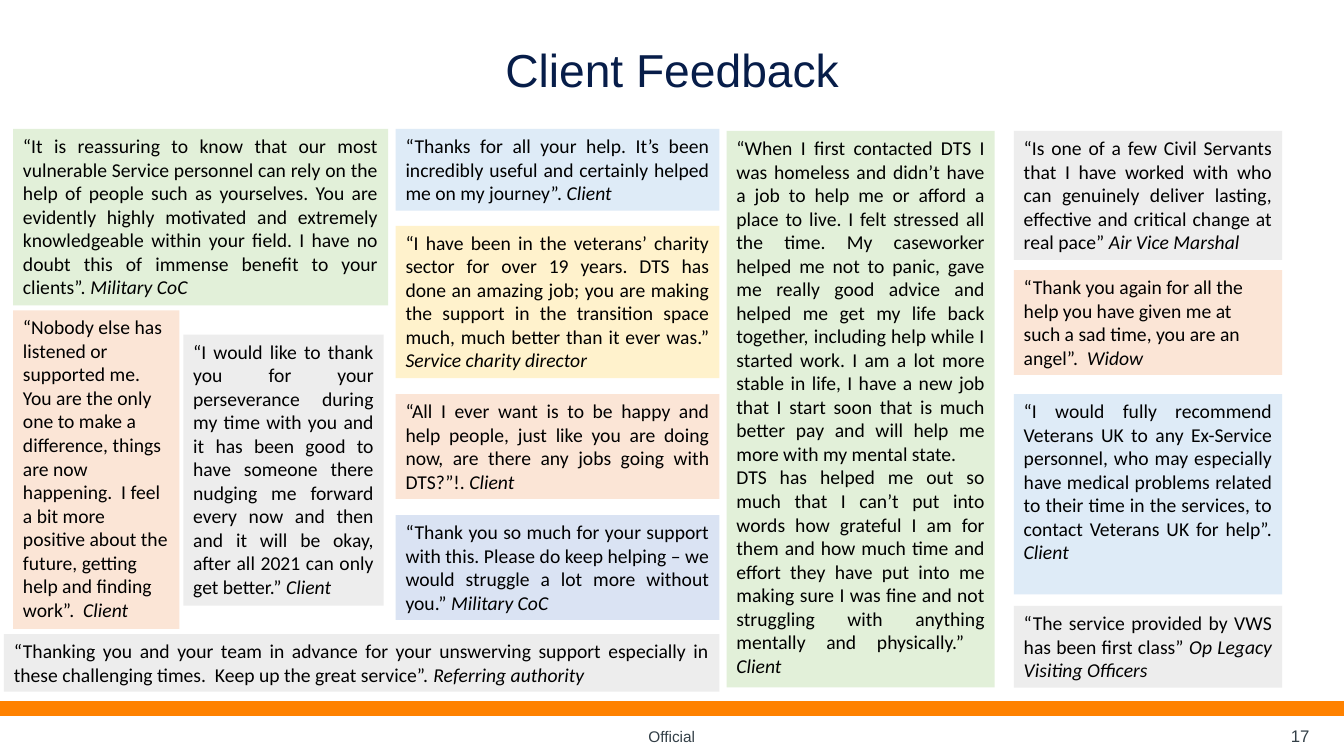
"""Build the Client Feedback slide of colour-coded quotations."""
from lxml import etree
from pptx import Presentation
from pptx.dml.color import RGBColor
from pptx.enum.shapes import MSO_CONNECTOR, MSO_SHAPE
from pptx.enum.text import MSO_ANCHOR, PP_ALIGN
from pptx.oxml.ns import qn
from pptx.util import Cm, Pt

LEFT, CENTER, RIGHT, JUSTIFY = PP_ALIGN.LEFT, PP_ALIGN.CENTER, PP_ALIGN.RIGHT, PP_ALIGN.JUSTIFY
TOP, BOTTOM = MSO_ANCHOR.TOP, MSO_ANCHOR.BOTTOM
RECTANGLE = MSO_SHAPE.RECTANGLE
STRAIGHT = MSO_CONNECTOR.STRAIGHT

COLOURS = {
    "navy": "071D49", "slate": "333F47", "orange": "FF8200", "black": "000000",
    "green": "E2F0D9", "blue": "DEEBF7", "peach": "FBE5D6",
    "lavender": "DAE3F3", "grey": "EDEDED", "yellow": "FFF2CC",
}
SLIDE_WIDTH, SLIDE_HEIGHT = 33.87, 19.05
COLUMN_1, COLUMN_2, COLUMN_3, COLUMN_4 = 0.33, 9.97, 18.31, 25.55
WIDTH_2, WIDTH_3 = 8.16, 6.76

QUOTES = [
    ((COLUMN_1, 3.25, 9.45, 4.45), "green", JUSTIFY,
     ["“It is reassuring to know that our most vulnerable Service personnel can rely on the help of "
      "people such as yourselves. You are evidently highly motivated and extremely knowledgeable "
      "within your field. I have no doubt this of immense benefit to your clients”. "],
     "Military CoC"),
    ((COLUMN_2, 3.25, WIDTH_2, 2.06), "blue", JUSTIFY,
     ["“Thanks for all your help. It’s been incredibly useful and certainly helped me on my "
      "journey”. "],
     "Client"),
    ((COLUMN_3, 3.3, WIDTH_3, 14.02), "green", JUSTIFY,
     ["“When I first contacted DTS I was homeless and didn’t have a job to help me or afford a "
      "place to live. I felt stressed all the time. My caseworker helped me not to panic, gave me "
      "really good advice and helped me get my life back together, including help while I started "
      "work. I am a lot more stable in life, I have a new job that I start soon that is much better "
      "pay and will help me more with my mental state. ",
      "DTS has helped me out so much that I can’t put into words how grateful I am for them and how "
      "much time and effort they have put into me making sure I was fine and not struggling with "
      "anything mentally and physically.”  "],
     "Client"),
    ((COLUMN_2, 9.93, WIDTH_2, 2.64), "peach", JUSTIFY,
     ["“All I ever want is to be happy and help people, just like you are doing now, are there any "
      "jobs going with DTS?”!. "],
     "Client"),
    ((COLUMN_2, 12.98, WIDTH_2, 2.64), "lavender", JUSTIFY,
     ["“Thank you so much for your support with this. Please do keep helping – we would struggle a "
      "lot more without you.” "],
     "Military CoC"),
    ((4.62, 8.43, 5.05, 6.83), "grey", JUSTIFY,
     ["“I would like to thank you for your perseverance during my time with you and it has been "
      "good to have someone there nudging me forward every now and then and it will be okay, after "
      "all 2021 can only get better.” "],
     "Client"),
    ((COLUMN_2, 5.69, WIDTH_2, 3.84), "yellow", JUSTIFY,
     ["“I have been in the veterans’ charity sector for over 19 years. DTS has done an amazing job; "
      "you are making the support in the transition space much, much better than it ever was.” "],
     "Service charity director"),
    ((COLUMN_1, 7.82, 4.19, 8.03), "peach", LEFT,
     ["“Nobody else has listened or supported me. You are the only one to make a difference, things "
      "are now happening.  I feel a bit more positive about the future, getting help and finding "
      "work”.  "],
     "Client"),
    ((0.1, 15.98, 18.03, 1.45), "grey", JUSTIFY,
     ["“Thanking you and your team in advance for your unswerving support especially in these "
      "challenging times.  Keep up the great service”. "],
     "Referring authority"),
    ((COLUMN_4, 3.3, WIDTH_3, 3.25), "grey", JUSTIFY,
     ["“Is one of a few Civil Servants that I have worked with who can genuinely deliver lasting, "
      "effective and critical change at real pace” "],
     "Air Vice Marshal"),
    ((COLUMN_4, 6.81, WIDTH_3, 2.64), "peach", LEFT,
     ["“Thank you again for all the help you have given me at such a sad time, you are an angel”.  "],
     "Widow"),
    ((COLUMN_4, 9.93, WIDTH_3, 5.05), "blue", JUSTIFY,
     ["“I would fully recommend Veterans UK to any Ex-Service personnel, who may especially have "
      "medical problems related to their time in the services, to contact Veterans UK for help”. "],
     "Client"),
    ((COLUMN_4, 15.27, WIDTH_3, 2.06), "grey", JUSTIFY,
     ["“The service provided by VWS has been first class” "],
     "Op Legacy Visiting Officers"),
]


class FeedbackSlide:
    """Hold the slide and its text style, and draw each kind of element."""

    def __init__(self, slide):
        self.slide = slide
        self.quote_font, self.quote_size = "Calibri", 14
        self.label_font = "Arial"

    def colour(self, name):
        return RGBColor.from_string(COLOURS[name])

    def style(self, paragraph, font, size, colour, align):
        paragraph.alignment = align
        paragraph.font.name = font
        paragraph.font.size = Pt(size)
        paragraph.font.color.rgb = self.colour(colour)

    def label(self, bounds, text, size, colour, align, anchor):
        box = self.slide.shapes.add_textbox(*map(Cm, bounds))
        frame = box.text_frame
        frame.word_wrap = True
        frame.vertical_anchor = anchor
        frame.margin_left = frame.margin_top = frame.margin_right = frame.margin_bottom = 0
        paragraph = frame.paragraphs[0]
        paragraph.text = text
        self.style(paragraph, self.label_font, size, colour, align)
        return paragraph

    def rule(self, y, colour, weight):
        line = self.slide.shapes.add_connector(STRAIGHT, 0, Cm(y), Cm(SLIDE_WIDTH), Cm(y))
        line.line.color.rgb = self.colour(colour)
        line.line.width = Pt(weight)
        etree.SubElement(line._element.spPr, qn("a:effectLst"))

    def quote(self, bounds, fill, align, passages, speaker):
        card = self.slide.shapes.add_shape(RECTANGLE, *map(Cm, bounds))
        card.shadow.inherit = False
        card.fill.solid()
        card.fill.fore_color.rgb = self.colour(fill)
        card.line.fill.background()
        frame = card.text_frame
        frame.word_wrap = True
        frame.vertical_anchor = TOP
        for index, passage in enumerate(passages):
            paragraph = frame.add_paragraph() if index else frame.paragraphs[0]
            paragraph.add_run().text = passage
            self.style(paragraph, self.quote_font, self.quote_size, "black", align)
        credit = paragraph.add_run()
        credit.text = speaker
        credit.font.italic = True


def main():
    deck = Presentation()
    deck.slide_width, deck.slide_height = Cm(SLIDE_WIDTH), Cm(SLIDE_HEIGHT)
    feedback = FeedbackSlide(deck.slides.add_slide(deck.slide_layouts[6]))
    title = feedback.label((0.99, 1.19, 31.9, 1.09), "Client Feedback", 33, "navy", CENTER, TOP)
    title.line_spacing = 0.9
    feedback.label((30, 18.29, 3, 0.51), "17", 12, "slate", RIGHT, BOTTOM)
    feedback.rule(17.86, "orange", 11)
    feedback.label((4.93, 18.31, 24, 0.48), "Official", 11, "slate", CENTER, BOTTOM)
    for quote in QUOTES:
        feedback.quote(*quote)
    deck.save("out.pptx")


if __name__ == "__main__":
    main()
